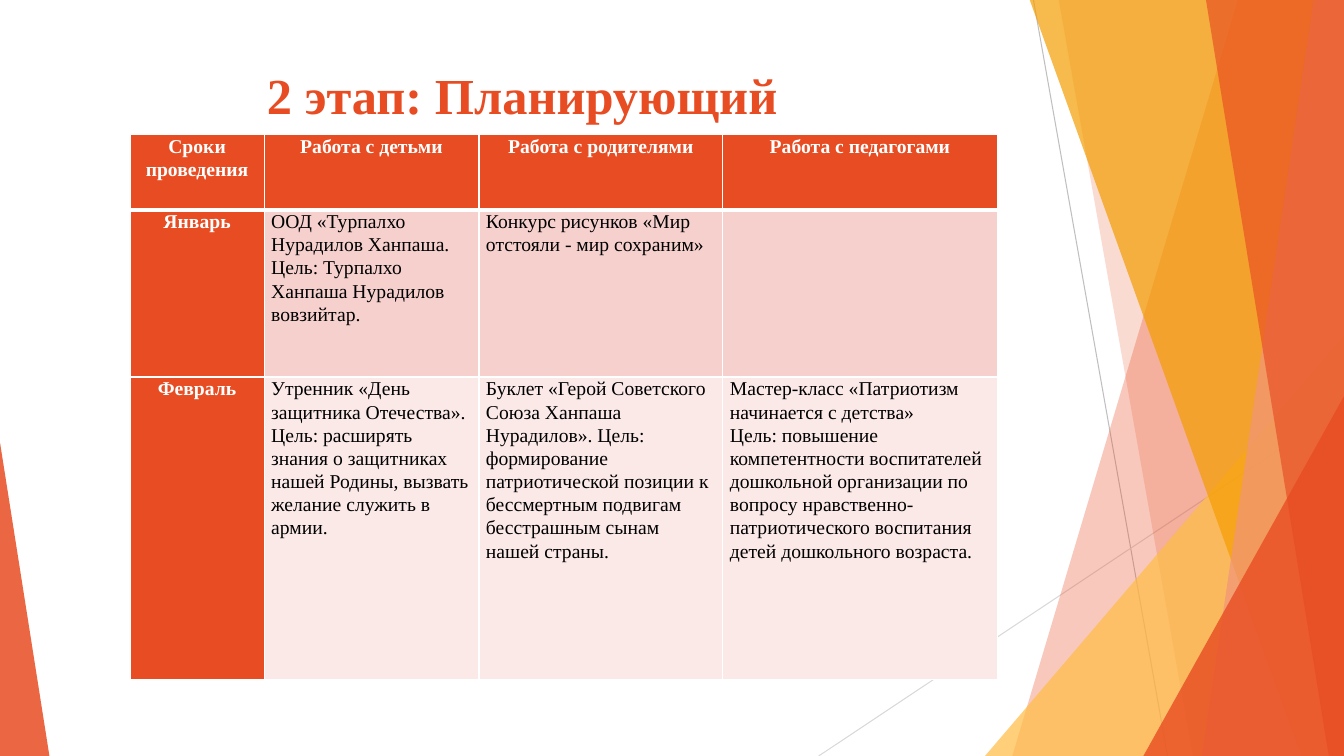
from lxml import etree
from pptx import Presentation
from pptx.dml.color import RGBColor
from pptx.enum import shapes, text
from pptx.oxml import ns
from pptx.util import Inches, Pt

ORANGE = RGBColor(0xE8, 0x4C, 0x22)
AMBER = RGBColor(0xF4, 0x9D, 0x00)
YELLOW = RGBColor(0xFF, 0xBD, 0x47)
SALMON = RGBColor(0xF1, 0x94, 0x7A)
PINK = RGBColor(0xF6, 0xD0, 0xCD)
PALE = RGBColor(0xFB, 0xE9, 0xE8)
GREY = RGBColor(0xBF, 0xBF, 0xBF)
LIGHT_GREY = RGBColor(0xD9, 0xD9, 0xD9)
WHITE = RGBColor(0xFF, 0xFF, 0xFF)
BLACK = RGBColor(0, 0, 0)

WIDTH, HEIGHT = 13.33, 7.5
TOP = -0.01
COLUMNS = [1.33, 2.13, 2.42, 2.72]
ROWS = [0.75, 1.66, 3]
PLAN = [
    [["Сроки", "проведения"], ["Работа с детьми"], ["Работа с родителями"], ["Работа с педагогами"]],
    [["Январь"],
     ["ООД «Турпалхо Нурадилов Ханпаша. Цель: Турпалхо Ханпаша Нурадилов вовзийтар."],
     ["Конкурс рисунков «Мир отстояли - мир сохраним»"],
     []],
    [["Февраль"],
     ["Утренник «День защитника Отечества». Цель: расширять знания о защитниках нашей Родины, "
      "вызвать желание служить в армии."],
     ["Буклет «Герой Советского Союза Ханпаша Нурадилов». Цель: формирование патриотической "
      "позиции к бессмертным подвигам бесстрашным сынам нашей страны."],
     ["Мастер-класс «Патриотизм начинается с детства»",
      "Цель: повышение компетентности воспитателей дошкольной организации по вопросу "
      "нравственно-патриотического воспитания детей дошкольного возраста."]],
]


class Deck:
    font = "Times New Roman"

    def __init__(self):
        self.prs = Presentation()
        self.prs.slide_width = Inches(WIDTH)
        self.prs.slide_height = Inches(HEIGHT)
        self.s = self.prs.slides.add_slide(self.prs.slide_layouts[6])

    def line(self, x1, y1, x2, y2, color):
        c = self.s.shapes.add_connector(shapes.MSO_CONNECTOR.STRAIGHT, *map(Inches, (x1, y1, x2, y2)))
        c.line.color.rgb = color
        c.line.width = Pt(0.75)
        etree.SubElement(c._element.spPr, ns.qn("a:effectLst"))

    def paint(self, sp, color, opacity):
        sp.shadow.inherit = False
        sp.line.fill.background()
        sp.fill.solid()
        sp.fill.fore_color.rgb = color
        clr = sp._element.spPr.find(".//" + ns.qn("a:srgbClr"))
        etree.SubElement(clr, ns.qn("a:alpha"), val=str(opacity * 1000))

    def band(self, top_x, bottom_x, color, opacity):
        points = [(top_x, TOP), (WIDTH, TOP), (WIDTH, HEIGHT), (bottom_x, HEIGHT)]
        points = [(Inches(x), Inches(y)) for x, y in points]
        builder = self.s.shapes.build_freeform(*points[0])
        builder.add_line_segments(points[1:], close=True)
        self.paint(builder.convert_to_shape(), color, opacity)

    def triangle(self, x, y, w, apex, color, opacity):
        sp = self.s.shapes.add_shape(shapes.MSO_SHAPE.ISOSCELES_TRIANGLE,
                                     *map(Inches, (x, y, w, HEIGHT - y)))
        sp.adjustments[0] = apex
        self.paint(sp, color, opacity)

    def run(self, p, words, size, color, bold):
        r = p.add_run()
        r.text = words
        r.font.name = self.font
        r.font.size = Pt(size)
        r.font.bold = bold
        r.font.color.rgb = color

    def title(self, words, x, y, w, h):
        tf = self.s.shapes.add_textbox(*map(Inches, (x, y, w, h))).text_frame
        tf.word_wrap = True
        tf.margin_top = Inches(0.09)
        p = tf.paragraphs[0]
        p.alignment = text.PP_ALIGN.CENTER
        self.run(p, words, 36, ORANGE, True)

    def border(self, cell, side, width):
        ln = etree.SubElement(cell._tc.get_or_add_tcPr(), ns.qn("a:ln" + side), w=str(Pt(width)))
        fill = etree.SubElement(ln, ns.qn("a:solidFill"))
        etree.SubElement(fill, ns.qn("a:srgbClr"), val=str(WHITE))

    def cell(self, cell, lines, row, heading):
        cell.margin_left = cell.margin_right = Inches(0.07)
        cell.margin_top = cell.margin_bottom = 0
        for side in "LRTB":
            thick = (row, side) in ((0, "B"), (1, "T"))
            self.border(cell, side, 3 if thick else 1)
        cell.fill.solid()
        cell.fill.fore_color.rgb = ORANGE if heading else (PINK if row % 2 else PALE)
        for i, words in enumerate(lines):
            tf = cell.text_frame
            p = tf.add_paragraph() if i else tf.paragraphs[0]
            p.line_spacing = 1.07
            p.alignment = text.PP_ALIGN.CENTER if heading else text.PP_ALIGN.LEFT
            self.run(p, words, 14, WHITE if heading else BLACK, heading)

    def table(self, x, y, columns, rows, data):
        size = map(Inches, (x, y, sum(columns), sum(rows)))
        table = self.s.shapes.add_table(len(rows), len(columns), *size).table
        for column, width in zip(table.columns, columns):
            column.width = Inches(width)
        for row, height in zip(table.rows, rows):
            row.height = Inches(height)
        for i, entries in enumerate(data):
            for j, lines in enumerate(entries):
                self.cell(table.cell(i, j), lines, i, i == 0 or j == 0)


def main():
    deck = Deck()
    deck.line(10.25, 0, 11.58, HEIGHT, GREY)
    deck.line(WIDTH, 4.03, 8.12, HEIGHT, LIGHT_GREY)
    deck.band(12.28, 10.04, ORANGE, 30)
    deck.band(10.5, 11.83, ORANGE, 20)
    deck.triangle(9.77, 3.33, 3.56, 1, YELLOW, 72)
    deck.band(10.21, 12.91, AMBER, 70)
    deck.band(13.03, 11.92, SALMON, 70)
    deck.band(11.96, 13.18, ORANGE, 65)
    deck.triangle(11.34, 3.93, 1.99, 1, ORANGE, 80)
    deck.triangle(0, 4.39, 0.49, 0, ORANGE, 85)
    deck.title("2 этап: Планирующий", 0.48, 0.55, 9.4, 1.44)
    deck.table(1.29, 1.33, COLUMNS, ROWS, PLAN)
    deck.prs.save("out.pptx")


if __name__ == "__main__":
    main()
